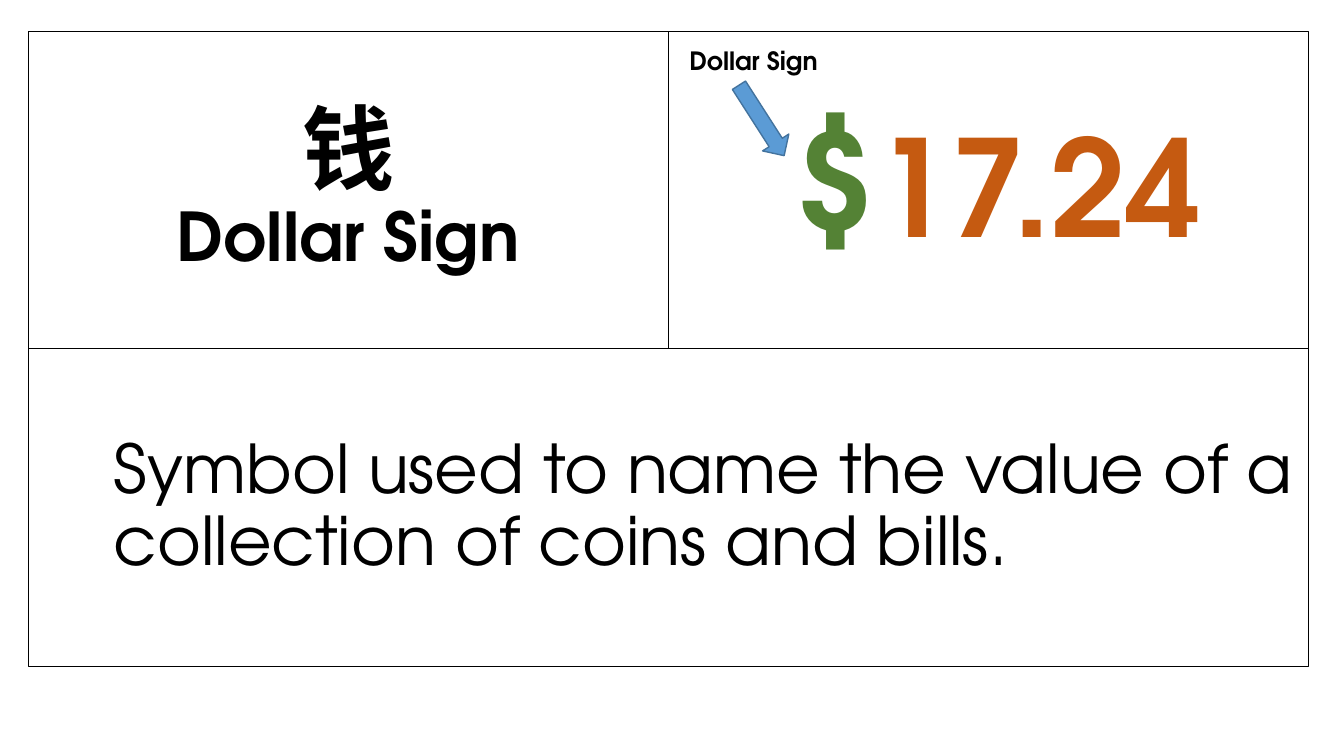
from lxml import etree
from pptx import Presentation
from pptx.dml.color import RGBColor
from pptx.enum.shapes import MSO_SHAPE
from pptx.enum.text import MSO_ANCHOR, MSO_AUTO_SIZE, PP_ALIGN
from pptx.oxml.ns import qn
from pptx.util import Emu, Inches, Pt

RECTANGLE, RIGHT_ARROW = MSO_SHAPE.RECTANGLE, MSO_SHAPE.RIGHT_ARROW
LEFT, CENTER = PP_ALIGN.LEFT, PP_ALIGN.CENTER
MIDDLE = MSO_ANCHOR.MIDDLE
GROW = MSO_AUTO_SIZE.SHAPE_TO_FIT_TEXT

COLORS = {
    "black": "000000",
    "white": "FFFFFF",
    "symbol": "548235",
    "amount": "C55A11",
    "arrow": "5B9BD5",
    "arrow_edge": "43739E",
}
FONT = "TeX Gyre Adventor"
CHINESE_FONT = "Roboto"
GRID_LEFT, GRID_TOP = 0.28, 0.31
COLUMN, ROW = 6.35, 3.15


def color(name):
    return RGBColor.from_string(COLORS[name])


class VocabularyCard:
    def __init__(self, presentation):
        self.slide = presentation.slides.add_slide(presentation.slide_layouts[6])

    def add_shape(self, kind, box, line, line_width, fill=None):
        shape = self.slide.shapes.add_shape(kind, *map(Inches, box))
        shape.shadow.inherit = False
        if fill:
            shape.fill.solid()
            shape.fill.fore_color.rgb = color(fill)
        else:
            shape.fill.background()
        shape.line.color.rgb = color(line)
        shape.line.width = Pt(line_width)
        return shape

    def add_cell(self, column, row, span=1, align=CENTER, indent=0):
        """Add a bordered grid cell and return its empty paragraph."""
        box = (GRID_LEFT + column * COLUMN, GRID_TOP + row * ROW, span * COLUMN, ROW)
        frame = self.add_shape(RECTANGLE, box, "black", 0.75).text_frame
        frame.word_wrap = True
        frame.vertical_anchor = MIDDLE
        paragraph = frame.paragraphs[0]
        paragraph.alignment = align
        paragraph.line_spacing = 0.9
        if indent:
            properties = paragraph._p.get_or_add_pPr()
            properties.set("marL", str(Inches(indent)))
            properties.set("indent", "0")
        return paragraph

    def add_label(self, box):
        """Add a text box and return its empty paragraph."""
        frame = self.slide.shapes.add_textbox(*map(Inches, box)).text_frame
        frame.word_wrap = True
        frame.auto_size = GROW
        return frame.paragraphs[0]

    def add_text(self, paragraph, text, size, bold=True, tint="black", font=FONT, outline=None):
        run = paragraph.add_run()
        run.text = text
        run.font.name = font
        run.font.size = Pt(size)
        run.font.bold = bold
        run.font.color.rgb = color(tint)
        properties = run._r.get_or_add_rPr()
        etree.SubElement(properties, qn("a:ea")).set("typeface", font)
        if outline:
            line = etree.Element(qn("a:ln"), w=str(Pt(1.06)))
            fill = etree.SubElement(line, qn("a:solidFill"))
            etree.SubElement(fill, qn("a:srgbClr")).set("val", COLORS[outline])
            properties.insert(0, line)

    def add_arrow(self, box, rotation):
        arrow = self.add_shape(RIGHT_ARROW, box, "arrow_edge", 1, "arrow")
        arrow.rotation = rotation


def main():
    presentation = Presentation()
    presentation.slide_width = Emu(12192000)
    presentation.slide_height = Inches(7.5)
    card = VocabularyCard(presentation)

    term = card.add_cell(0, 0)
    card.add_text(term, "钱", 66, font=CHINESE_FONT)
    term.add_line_break()
    card.add_text(term, "Dollar Sign", 48)

    example = card.add_cell(1, 0)
    card.add_text(example, " ", 48)
    card.add_text(example, "$", 104, tint="symbol", outline="white")
    card.add_text(example, "17.24", 96, tint="amount")

    definition = card.add_cell(0, 1, span=2, align=LEFT, indent=0.75)
    sentence = "Symbol used to name the value of a collection of coins and bills."
    card.add_text(definition, sentence, 48, bold=False)

    card.add_arrow((7.14, 1.04, 0.83, 0.31), 57.3)
    card.add_text(card.add_label((6.74, 0.4, 2.53, 0.4)), "Dollar Sign", 18)

    presentation.save("out.pptx")


if __name__ == "__main__":
    main()
